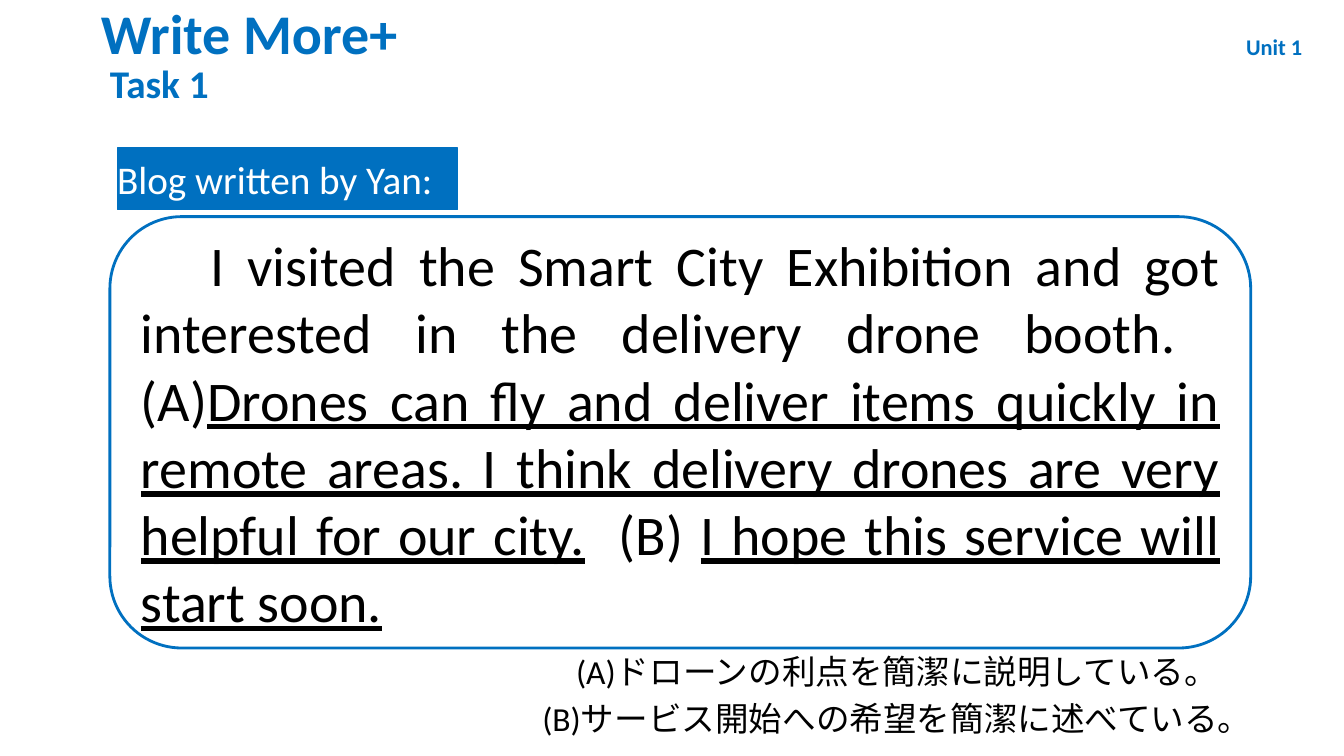
from pptx import Presentation
from pptx.dml.color import RGBColor
from pptx.enum.shapes import MSO_SHAPE
from pptx.enum.text import MSO_ANCHOR, MSO_AUTO_SIZE, PP_ALIGN
from pptx.util import Cm, Pt

LEFT, CENTER, RIGHT, JUSTIFY = PP_ALIGN.LEFT, PP_ALIGN.CENTER, PP_ALIGN.RIGHT, PP_ALIGN.JUSTIFY
MIDDLE = MSO_ANCHOR.MIDDLE
NO_AUTOFIT = MSO_AUTO_SIZE.NONE
RECTANGLE, ROUNDED = MSO_SHAPE.RECTANGLE, MSO_SHAPE.ROUNDED_RECTANGLE
BLUE, WHITE, BLACK = "0070C0", "FFFFFF", "000000"
FONT = "Calibri"
TITLE_ONLY = 5


def rgb(color):
    return RGBColor.from_string(color)


def prepare_frame(shape, margin=0):
    frame = shape.text_frame
    frame.word_wrap = True
    frame.auto_size = NO_AUTOFIT
    frame.vertical_anchor = MIDDLE
    frame.margin_left = frame.margin_right = Cm(margin)
    frame.margin_top = frame.margin_bottom = Cm(margin / 2)
    return frame


def add_run(paragraph, text, size, color, bold=False, underline=False):
    run = paragraph.add_run()
    run.text = text
    font = run.font
    font.name, font.size, font.bold = FONT, Pt(size), bold
    font.underline = underline
    font.color.rgb = rgb(color)


def write_lines(shape, lines, size, color, align=LEFT, bold=False):
    frame = prepare_frame(shape)
    for index, line in enumerate(lines):
        paragraph = frame.add_paragraph() if index else frame.paragraphs[0]
        paragraph.alignment = align
        paragraph.space_before = Pt(size * 0.2)
        add_run(paragraph, line, size, color, bold)


def place_title(slide, text, left, top, width, height):
    title = slide.shapes.title
    title.left, title.top = Cm(left), Cm(top)
    title.width, title.height = Cm(width), Cm(height)
    write_lines(title, [text], 40, BLUE, bold=True)


def add_label(slide, lines, box, size, color, align=LEFT, bold=False):
    label = slide.shapes.add_textbox(*map(Cm, box))
    write_lines(label, lines, size, color, align, bold)


def add_panel(slide, kind, box, fill, line_width):
    panel = slide.shapes.add_shape(kind, *map(Cm, box))
    panel.shadow.inherit = False
    panel.fill.solid()
    panel.fill.fore_color.rgb = rgb(fill)
    panel.line.color.rgb = rgb(BLUE)
    panel.line.width = Pt(line_width)
    return panel


def add_blog(slide, box, passages):
    blog = add_panel(slide, ROUNDED, box, WHITE, 2)
    paragraph = prepare_frame(blog, 0.25).paragraphs[0]
    paragraph.alignment = JUSTIFY
    paragraph._p.get_or_add_pPr().set("indent", str(Cm(1.75)))
    for text, underline in passages:
        add_run(paragraph, text, 40, BLACK, underline=underline)


def main():
    deck = Presentation()
    deck.slide_width, deck.slide_height = Cm(33.87), Cm(19.05)
    slide = deck.slides.add_slide(deck.slide_layouts[TITLE_ONLY])

    place_title(slide, "Write More+", 2.54, 0, 9.8, 1.6)
    add_label(slide, ["Task 1"], (2.77, 1.5, 3.5, 1.19), 28, BLUE, bold=True)
    heading = add_panel(slide, RECTANGLE, (2.95, 3.73, 8.59, 1.55), BLUE, 0.75)
    write_lines(heading, ["Blog written by Yan:"], 28, WHITE, JUSTIFY)
    add_blog(slide, (2.77, 5.46, 28.75, 10.87), [
        ("I visited the Smart City Exhibition and got interested in "
         "the delivery drone booth.  (A)", False),
        ("Drones can fly and deliver items quickly in remote areas. "
         "I think delivery drones are very helpful for our city.", True),
        ("  (B) ", False),
        ("I hope this service will start soon.", True),
    ])
    add_label(slide, ["(A)ドローンの利点を簡潔に説明している。　",
                      "(B)サービス開始への希望を簡潔に述べている。"],
              (8.53, 16.36, 23.01, 2.26), 24, BLACK, RIGHT)
    add_label(slide, ["Unit 1"], (30.99, 0.38, 2.24, 1.6), 16, BLUE, CENTER, True)

    deck.save("out.pptx")


if __name__ == "__main__":
    main()
